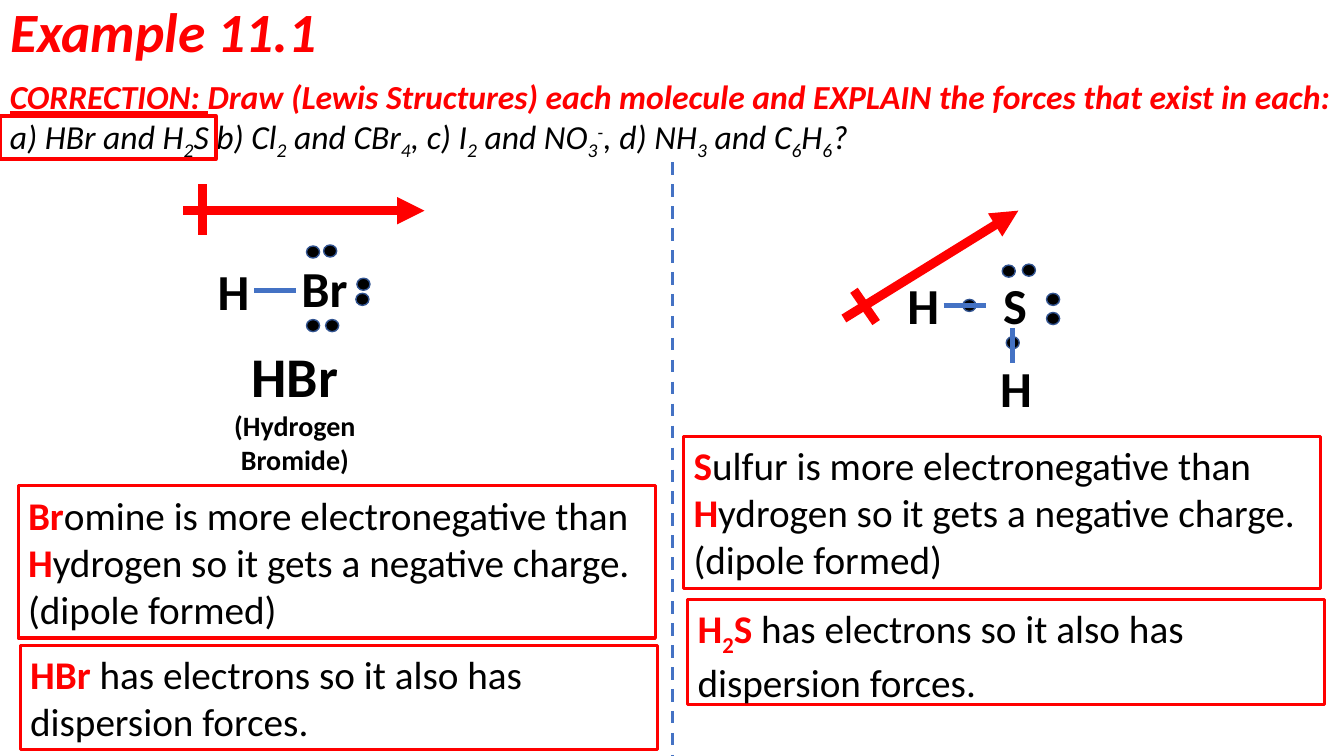
from lxml import etree
from pptx import Presentation
from pptx.dml.color import RGBColor
from pptx.enum.dml import MSO_LINE
from pptx.enum.shapes import MSO_CONNECTOR, MSO_SHAPE
from pptx.enum.text import MSO_ANCHOR, MSO_AUTO_SIZE, PP_ALIGN
from pptx.oxml.ns import qn
from pptx.util import Inches, Pt

RECTANGLE, OVAL = MSO_SHAPE.RECTANGLE, MSO_SHAPE.OVAL
STRAIGHT, DASH = MSO_CONNECTOR.STRAIGHT, MSO_LINE.DASH
TOP, MIDDLE = MSO_ANCHOR.TOP, MSO_ANCHOR.MIDDLE
LEFT, CENTER = PP_ALIGN.LEFT, PP_ALIGN.CENTER
NO_FIT = MSO_AUTO_SIZE.NONE
FONT, RED, BLACK, BLUE, DOT_EDGE = "Calibri", "FF0000", "000000", "4472C4", "325491"
DOT_SIZE = (0.13, 0.12)

# Run styles: colour, font values, baseline shift
STYLES = {
    "title": (RED, {"size": Pt(39.6), "bold": True, "italic": True}, 0),
    "correction": (RED, {"size": Pt(24), "bold": True, "italic": True, "underline": True}, 0),
    "task": (RED, {"size": Pt(24), "bold": True, "italic": True}, 0),
    "item": (BLACK, {"size": Pt(24), "italic": True}, 0),
    "item sub": (BLACK, {"size": Pt(24), "italic": True}, -25),
    "item super": (BLACK, {"size": Pt(24), "italic": True}, 30),
    "atom": (BLACK, {"size": Pt(36), "bold": True}, 0),
    "formula": (BLACK, {"size": Pt(40), "bold": True}, 0),
    "name": (BLACK, {"size": Pt(20), "bold": True}, 0),
    "key": (RED, {"size": Pt(28), "bold": True}, 0),
    "key sub": (RED, {"size": Pt(28), "bold": True}, -25),
    "note": (BLACK, {"size": Pt(28)}, 0),
}

# Content
TITLE = [[("Example 11.1", "title")]]
ITEMS = ["a) HBr and H", "2", "S b) Cl", "2", " and CBr", "4", ", c) I", "2", " and NO", "3",
         "-", ", d) NH", "3", " and C", "6", "H", "6", "?"]
QUESTION = [
    [("CORRECTION: ", "correction"),
     ("Draw (Lewis Structures) each molecule and EXPLAIN the forces that exist in each:", "task")],
    [(part, "item sub" if part.isdigit() else "item super" if part == "-" else "item")
     for part in ITEMS],
]
HBR_LABEL = [[("HBr", "formula")], [("(Hydrogen Bromide)", "name")]]


def dipole_note(initial, rest):
    return [[(initial, "key"), (rest + " is more electronegative than ", "note"), ("H", "key"),
             ("ydrogen so it gets a negative charge. (dipole formed)", "note")]]


def dispersion_note(*formula):
    return [[*formula, ("has electrons so it also has dispersion forces.", "note")]]


NOTES = [
    (0.18, 4.82, 1.51, dipole_note("Br", "omine")),
    (0.2, 6.4, 1.04, dispersion_note(("HBr ", "key"))),
    (6.78, 4.33, 1.51, dipole_note("S", "ulfur")),
    (6.82, 5.95, 1.04, dispersion_note(("H", "key"), ("2", "key sub"), ("S ", "key"))),
]
NOTE_WIDTH = 6.32

# Each molecule: atoms, electron dots, bonds, dipole arrow and its cross stroke
MOLECULES = [
    {"atoms": [("Br", 2.89, 2.5, 0.74), ("H", 2.06, 2.53, 0.49)],
     "dots": [(3.04, 2.44), (3.21, 2.43), (3.54, 2.76), (3.53, 2.91), (3.04, 3.17), (3.23, 3.17)],
     "bonds": [(2.52, 2.88, 2.94, 2.88)],
     "arrow": (1.82, 2.09, 4.21, 2.09), "cross": (2.01, 2.33, 2.01, 1.83)},
    {"atoms": [("S", 9.85, 2.67, 0.51), ("H", 8.9, 2.67, 0.49), ("H", 9.82, 3.49, 0.49)],
     "dots": [(9.94, 2.63), (10.14, 2.62), (10.38, 2.91), (10.38, 3.1), (9.55, 2.97), (9.98, 3.34)],
     "bonds": [(9.36, 3.03, 9.78, 3.03), (10.04, 3.6, 10.04, 3.25)],
     "arrow": (8.37, 3.16, 10.1, 2.09), "cross": (8.69, 3.2, 8.47, 2.88)},
]


def color(value):
    return RGBColor.from_string(value)


def write(frame, paragraphs, align=LEFT, anchor=TOP):
    frame.word_wrap, frame.auto_size, frame.vertical_anchor = True, NO_FIT, anchor
    for index, runs in enumerate(paragraphs):
        paragraph = frame.add_paragraph() if index else frame.paragraphs[0]
        paragraph.alignment = align
        for text, style in runs:
            run = paragraph.add_run()
            run.text = text
            shade, values, baseline = STYLES[style]
            for key, value in {"name": FONT, "bold": False, **values}.items():
                setattr(run.font, key, value)
            run.font.color.rgb = color(shade)
            if baseline:
                run.font._element.set("baseline", str(baseline * 1000))


def add_text(box, paragraphs, align=LEFT):
    label = slide.shapes.add_textbox(*map(Inches, box))
    write(label.text_frame, paragraphs, align)


def add_outline(kind, box, edge, weight, fill=None):
    shape = slide.shapes.add_shape(kind, *map(Inches, box))
    shape.shadow.inherit = False
    if fill:
        shape.fill.solid()
        shape.fill.fore_color.rgb = color(fill)
    else:
        shape.fill.background()
    shape.line.color.rgb = color(edge)
    shape.line.width = Pt(weight)
    return shape


def add_line(ends, shade, weight, dash=None, arrow=False):
    connector = slide.shapes.add_connector(STRAIGHT, *map(Inches, ends))
    connector.line.color.rgb = color(shade)
    connector.line.width = Pt(weight)
    if dash:
        connector.line.dash_style = dash
    if arrow:
        etree.SubElement(connector.line._get_or_add_ln(), qn("a:tailEnd"), type="triangle")
    etree.SubElement(connector._element.spPr, qn("a:effectLst"))


presentation = Presentation()
presentation.slide_width, presentation.slide_height = Inches(13.33), Inches(7.5)
slide = presentation.slides.add_slide(presentation.slide_layouts[5])

# Title and question
title = slide.shapes.title
title.left, title.top, title.width, title.height = map(Inches, (0, -0.01, 11.5, 0.71))
write(title.text_frame, TITLE, anchor=MIDDLE)
title.text_frame.paragraphs[0].line_spacing = 0.9
add_text((0, 0.7, 13.33, 0.91), QUESTION)
add_outline(RECTANGLE, (0, 1.15, 2.14, 0.43), RED, 2.75)

# Divider between the two molecules
add_line((6.67, 1.61, 6.67, 7.5), BLUE, 2.25, dash=DASH)

# Lewis structures
add_text((1.7, 3.34, 2.45, 1.45), HBR_LABEL, CENTER)
for molecule in MOLECULES:
    for symbol, left, top, width in molecule["atoms"]:
        add_text((left, top, width, 0.71), [[(symbol, "atom")]])
    for dot in molecule["dots"]:
        add_outline(OVAL, dot + DOT_SIZE, DOT_EDGE, 1, BLACK)
    for bond in molecule["bonds"]:
        add_line(bond, BLUE, 3.25)
    add_line(molecule["arrow"], RED, 6.5, arrow=True)
    add_line(molecule["cross"], RED, 6.5)

# Explanations
for left, top, height, paragraphs in NOTES:
    note = add_outline(RECTANGLE, (left, top, NOTE_WIDTH, height), RED, 2.25)
    write(note.text_frame, paragraphs)

presentation.save("out.pptx")
